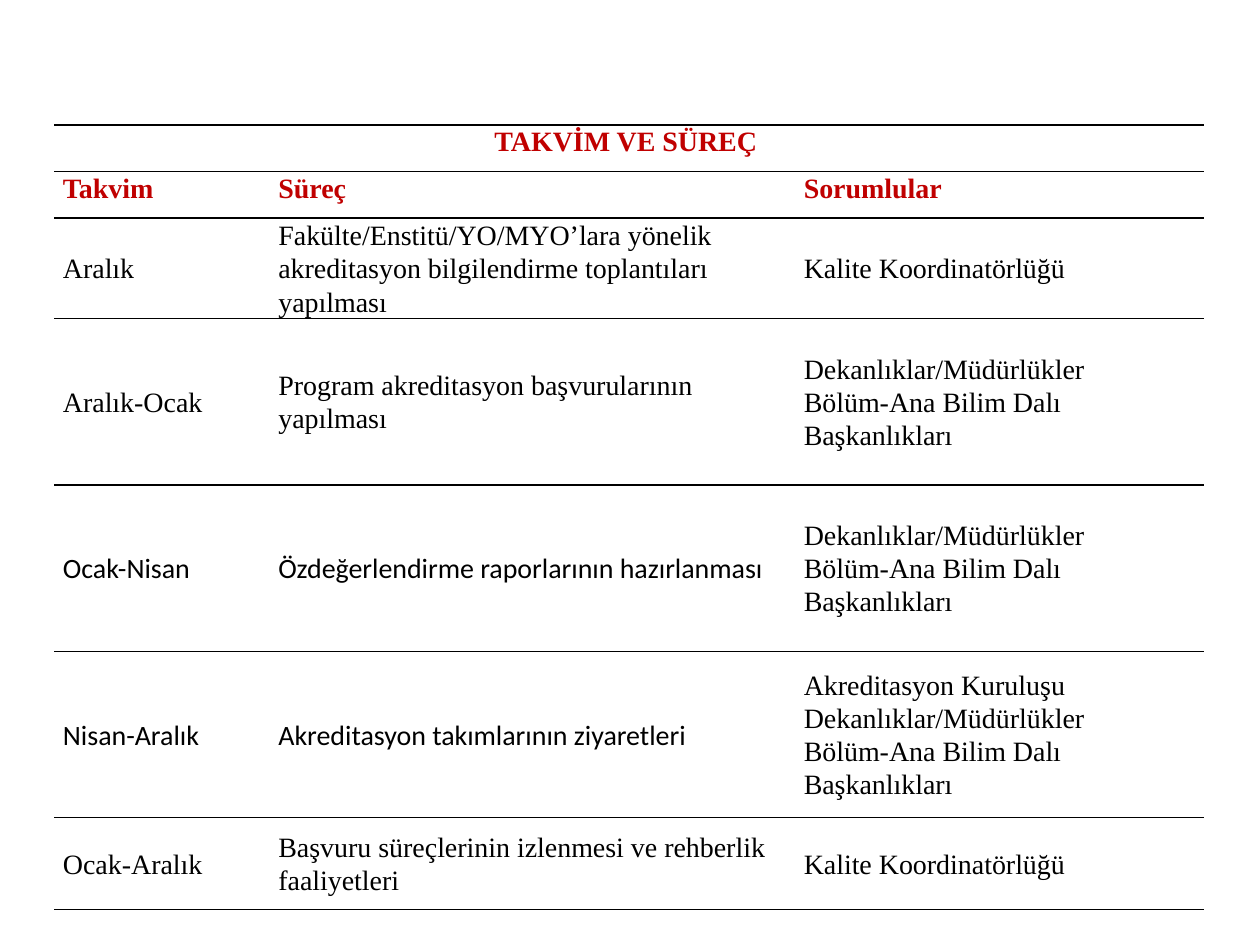
from lxml.etree import SubElement
from pptx import Presentation
from pptx.dml.color import RGBColor
from pptx.enum.text import MSO_ANCHOR, PP_ALIGN
from pptx.oxml.ns import qn
from pptx.util import Inches, Pt

RED = RGBColor(0xC0, 0x00, 0x00)
BLACK = RGBColor(0x00, 0x00, 0x00)
SERIF, SANS = "Times New Roman", "Calibri"

COLUMNS = [1.71, 4.17, 3.25]
ROWS = [0.37, 0.37, 0.8, 1.32, 1.32, 1.32, 0.73]
HEADER_ROWS = 2
SANS_ROWS = (4, 5)

OFFICE = "Kalite Koordinatörlüğü"
UNITS = "Dekanlıklar/Müdürlükler\nBölüm-Ana Bilim Dalı Başkanlıkları"
CALENDAR = [
    ("TAKVİM VE SÜREÇ ", "", ""),
    ("Takvim ", "Süreç", "Sorumlular"),
    ("Aralık",
     "Fakülte/Enstitü/YO/MYO’lara yönelik akreditasyon "
     "bilgilendirme toplantıları yapılması", OFFICE),
    ("Aralık-Ocak", "Program akreditasyon başvurularının yapılması", UNITS),
    ("Ocak-Nisan", "Özdeğerlendirme raporlarının hazırlanması", UNITS),
    ("Nisan-Aralık", "Akreditasyon takımlarının ziyaretleri",
     "Akreditasyon Kuruluşu\n" + UNITS),
    ("Ocak-Aralık",
     "Başvuru süreçlerinin izlenmesi ve rehberlik faaliyetleri", OFFICE),
]


def set_borders(cell):
    """Rule the cell above and below, leaving its sides open."""
    tc_pr = cell._tc.get_or_add_tcPr()
    for side in ("lnL", "lnR"):
        SubElement(SubElement(tc_pr, qn(f"a:{side}"), w="0"), qn("a:noFill"))
    for side in ("lnT", "lnB"):
        line = SubElement(tc_pr, qn(f"a:{side}"), w=str(Pt(1)))
        fill = SubElement(line, qn("a:solidFill"))
        SubElement(fill, qn("a:srgbClr"), val=str(BLACK))


prs = Presentation()
prs.slide_width, prs.slide_height = Inches(10), Inches(7.5)
s = prs.slides.add_slide(prs.slide_layouts[6])

table = s.shapes.add_table(
    len(ROWS), len(COLUMNS), Inches(0.43), Inches(0.99),
    Inches(sum(COLUMNS)), Inches(sum(ROWS))).table
table.first_row = table.horz_banding = False
for column, width in zip(table.columns, COLUMNS):
    column.width = Inches(width)
for row, height in zip(table.rows, ROWS):
    row.height = Inches(height)
table.cell(0, 0).merge(table.cell(0, len(COLUMNS) - 1))

for i, texts in enumerate(CALENDAR):
    header = i < HEADER_ROWS
    for j, text in enumerate(texts):
        cell = table.cell(i, j)
        set_borders(cell)
        cell.fill.background()
        cell.margin_left = cell.margin_right = Inches(0.07)
        cell.margin_top = cell.margin_bottom = 0
        cell.vertical_anchor = MSO_ANCHOR.TOP if header else MSO_ANCHOR.MIDDLE
        if cell.is_spanned:
            continue
        cell.text_frame.text = text
        for p in cell.text_frame.paragraphs:
            p.line_spacing = 1.07
            if header:
                p.alignment = PP_ALIGN.CENTER if i == 0 else PP_ALIGN.JUSTIFY
            font = p.runs[0].font
            font.name = SANS if i in SANS_ROWS and j < 2 else SERIF
            font.size = Pt(16)
            font.bold = header
            font.color.rgb = RED if header else BLACK

prs.save("out.pptx")
